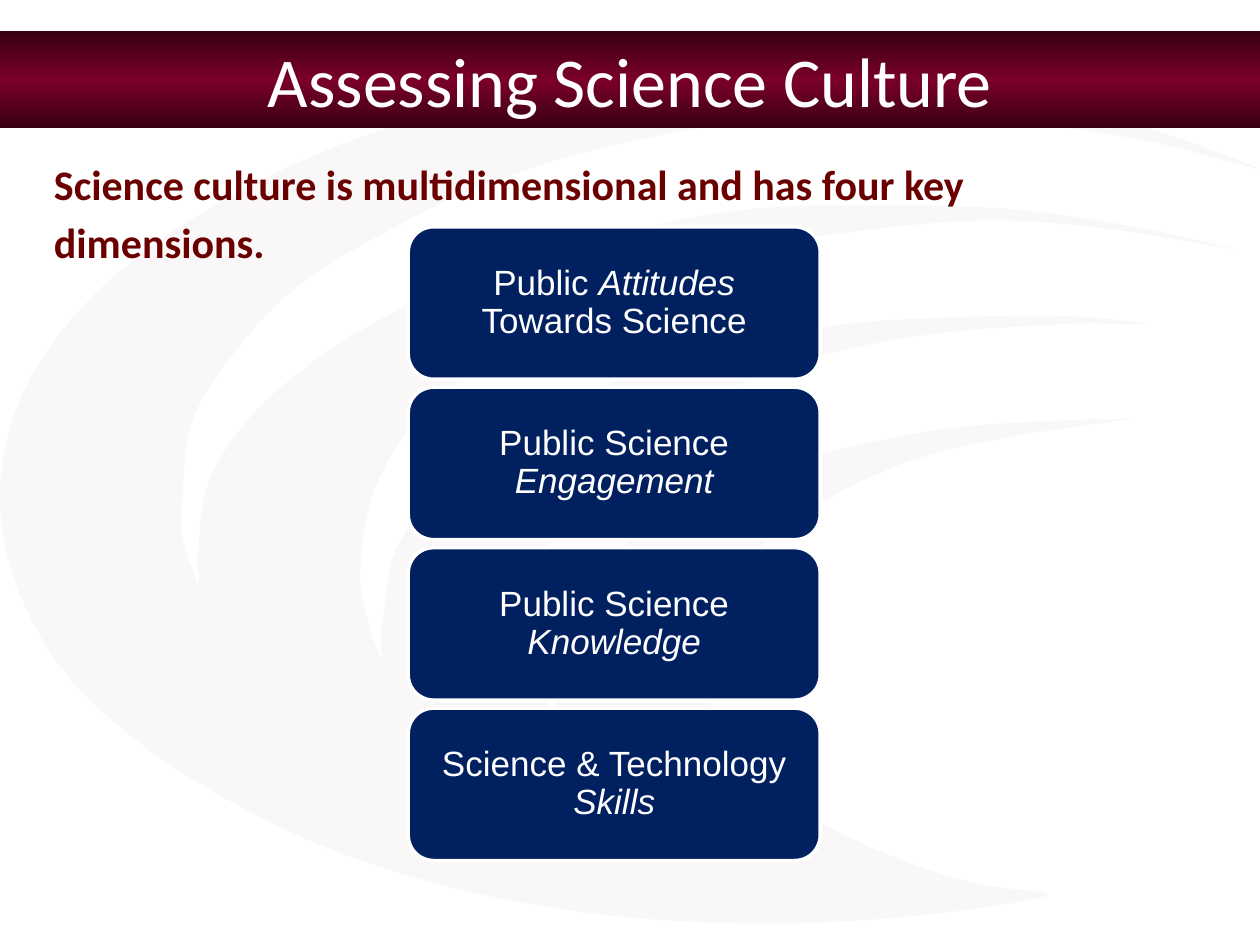
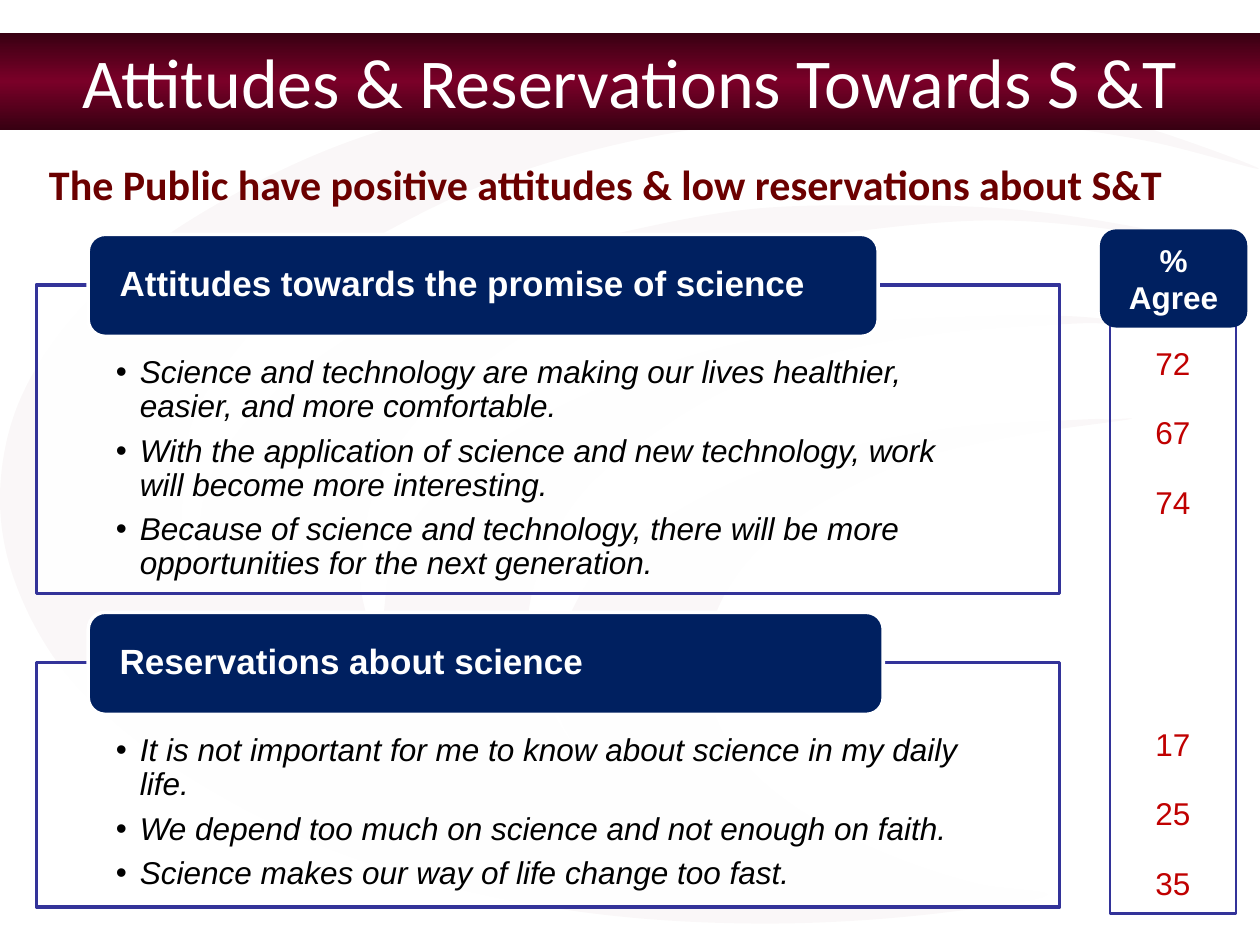
from copy import deepcopy
from dataclasses import dataclass

from lxml import etree
from pptx import Presentation
from pptx.dml.color import RGBColor
from pptx.enum.shapes import MSO_SHAPE
from pptx.enum.text import MSO_ANCHOR, PP_ALIGN
from pptx.oxml.ns import qn
from pptx.util import Emu, Pt

RECT = MSO_SHAPE.RECTANGLE
ROUNDED = MSO_SHAPE.ROUNDED_RECTANGLE
TOP, MIDDLE = MSO_ANCHOR.TOP, MSO_ANCHOR.MIDDLE
LEFT, CENTER = PP_ALIGN.LEFT, PP_ALIGN.CENTER

EMU_PER_PX = 9144
BLANK_LAYOUT = 6

WHITE = RGBColor(0xFF, 0xFF, 0xFF)
BLACK = RGBColor(0, 0, 0)
MAROON = RGBColor(0x7A, 0x00, 0x28)
DARK_MAROON = RGBColor(0x38, 0x00, 0x12)
LEAD_RED = RGBColor(0x6B, 0x00, 0x00)
NAVY = RGBColor(0x00, 0x20, 0x60)
FRAME_BLUE = RGBColor(0x33, 0x33, 0x99)
VALUE_RED = RGBColor(0xC0, 0x00, 0x00)

SWOOSH = (
    (608, 733), (488, 727), (374, 708), (270, 677), (181, 635), (105, 585),
    (48, 529), (12, 462), (0, 396), (12, 327), (48, 264), (105, 207),
    (181, 157), (270, 115), (374, 84), (488, 65), (608, 59), (718, 62),
    (822, 78), (915, 103), (999, 134), (911, 112), (810, 97), (705, 90),
    (592, 97), (488, 115), (391, 144), (310, 182), (238, 226), (189, 276),
    (153, 333), (145, 393), (145, 428), (157, 462), (157, 450), (157, 440),
    (165, 384), (197, 333), (250, 286), (318, 245), (399, 210), (491, 185),
    (596, 166), (705, 163), (802, 166), (895, 179), (980, 198), (882, 182),
    (782, 175), (669, 185), (564, 204), (472, 235), (395, 280), (334, 330),
    (298, 387), (286, 450), (290, 485), (302, 522), (302, 507), (304, 491),
    (314, 437), (351, 387), (407, 343), (484, 305), (572, 276), (673, 257),
    (786, 251), (850, 251), (911, 257), (882, 257), (850, 257), (750, 264),
    (661, 280), (580, 308), (516, 346), (463, 390), (431, 444), (419, 497),
    (431, 550), (459, 598), (443, 566), (439, 535), (451, 491), (479, 447),
    (532, 409), (596, 377), (673, 355), (762, 339), (859, 333), (879, 333),
    (895, 333), (806, 346), (725, 365), (657, 396), (604, 434), (572, 478),
    (560, 525), (568, 569), (592, 607), (629, 639), (673, 664), (725, 686),
    (778, 702), (830, 711), (725, 727),
)


@dataclass(frozen=True)
class Area:
    left: int
    top: int
    width: int
    height: int


@dataclass(frozen=True)
class TextStyle:
    font: str
    size: int
    color: RGBColor
    bold: bool = False
    italic: bool = False
    align: PP_ALIGN = LEFT
    spacing: float = 1.0


@dataclass(frozen=True)
class Dimension:
    lead: str
    emphasis: str
    rest: str = ""


@dataclass(frozen=True)
class Panel:
    frame: Area
    heading: str
    heading_width: int
    statements: tuple[str, ...]


TITLE_STYLE = TextStyle("Calibri", 40, WHITE, align=CENTER)
LEAD_STYLE = TextStyle("Calibri", 24, LEAD_RED, bold=True, spacing=1.15)
DIMENSION_STYLE = TextStyle("Arial", 20, WHITE, align=CENTER, spacing=0.9)
HEADING_STYLE = TextStyle("Arial", 20, WHITE, bold=True, spacing=0.9)
STATEMENT_STYLE = TextStyle("Arial", 18, BLACK, italic=True, spacing=0.9)
VALUE_STYLE = TextStyle("Arial", 18, VALUE_RED, align=CENTER)
AGREE_STYLE = TextStyle("Arial", 18, WHITE, bold=True, align=CENTER)

DIMENSIONS = (
    Dimension("Public ", "Attitudes", " Towards Science"),
    Dimension("Public Science ", "Engagement"),
    Dimension("Public Science ", "Knowledge"),
    Dimension("Science & Technology ", "Skills"),
)
DIMENSION_TOP = 180
DIMENSION_PITCH = 127.33

PANELS = (
    Panel(Area(29, 226, 812, 245), "Attitudes towards the promise of science", 627, (
        "Science and technology are making our lives healthier, easier, and more comfortable.",
        "With the application of science and new technology, work will become more interesting.",
        "Because of science and technology, there will be more opportunities for the next generation.",
    )),
    Panel(Area(29, 526, 812, 194), "Reservations about science", 631, (
        "It is not important for me to know about science in my daily life.",
        "We depend too much on science and not enough on faith.",
        "Science makes our way of life change too fast.",
    )),
)
AGREE_GROUPS = (("72", "67", "74"), ("17", "25", "35"))


def px(length: float) -> Emu:
    return Emu(round(length * EMU_PER_PX))


def set_alpha(shape, percent: int) -> None:
    color = shape._element.spPr.find(qn("a:solidFill"))[0]
    etree.SubElement(color, qn("a:alpha"), val=str(percent * 1000))


def style_paragraph(para, style: TextStyle) -> None:
    para.alignment = style.align
    para.line_spacing = style.spacing
    para.font.name = style.font
    para.font.size = Pt(style.size)
    para.font.color.rgb = style.color
    para.font.bold = style.bold
    para.font.italic = style.italic


def set_frame(shape, anchor: MSO_ANCHOR, side: int = 10, top: int = 5, bottom: int = 5):
    frame = shape.text_frame
    frame.word_wrap = True
    frame.vertical_anchor = anchor
    frame.margin_left = frame.margin_right = px(side)
    frame.margin_top, frame.margin_bottom = px(top), px(bottom)
    return frame


def write(frame, text: str, style: TextStyle) -> None:
    para = frame.paragraphs[0]
    para.add_run().text = text
    style_paragraph(para, style)


def add_box(page, kind: MSO_SHAPE, area: Area, fill: RGBColor | None,
            line: RGBColor | None = None, weight: float = 2):
    box = page.shapes.add_shape(
        kind, px(area.left), px(area.top), px(area.width), px(area.height))
    box.shadow.inherit = False
    if fill is None:
        box.fill.background()
    else:
        box.fill.solid()
        box.fill.fore_color.rgb = fill
    if line is None:
        box.line.fill.background()
    else:
        box.line.color.rgb = line
        box.line.width = Pt(weight)
    return box


def curve_segments(shape) -> None:
    segments = shape._element.spPr.findall(".//" + qn("a:lnTo"))
    ends = [(int(segment[0].get("x")), int(segment[0].get("y"))) for segment in segments]
    count = len(ends)
    for index, segment in enumerate(segments):
        before, start, end, after = (
            ends[(index + shift) % count] for shift in (-2, -1, 0, 1))
        leaving = [s + (e - b) / 6 for b, s, e in zip(before, start, end)]
        arriving = [e - (a - s) / 6 for s, e, a in zip(start, end, after)]
        curve = etree.Element(qn("a:cubicBezTo"))
        for x, y in (leaving, arriving, end):
            etree.SubElement(curve, qn("a:pt"), x=str(round(x)), y=str(round(y)))
        segment.getparent().replace(segment, curve)


def add_swoosh(page) -> None:
    first, *others = [(px(x), px(y)) for x, y in SWOOSH]
    builder = page.shapes.build_freeform(*first)
    builder.add_line_segments([*others, first], close=True)
    swoosh = builder.convert_to_shape()
    curve_segments(swoosh)
    swoosh.shadow.inherit = False
    swoosh.fill.solid()
    swoosh.fill.fore_color.rgb = MAROON
    set_alpha(swoosh, 3)
    swoosh.line.fill.background()


def add_title(page, text: str, top: int) -> None:
    band = add_box(page, RECT, Area(0, top, 1000, 77), MAROON)
    band.fill.gradient()
    band.fill.gradient_angle = 90
    stops = band._element.spPr.find(".//" + qn("a:gsLst"))
    stops.insert(1, deepcopy(stops[0]))
    colors = (DARK_MAROON, MAROON, DARK_MAROON)
    for index, (stop, color) in enumerate(zip(band.fill.gradient_stops, colors)):
        stop.position = index / 2
        stop.color.rgb = color
    write(set_frame(band, TOP), text, TITLE_STYLE)


def add_lead(page, text: str, area: Area) -> None:
    box = page.shapes.add_textbox(
        px(area.left), px(area.top), px(area.width), px(area.height))
    write(set_frame(box, TOP), text, LEAD_STYLE)


def add_page(deck, title: str, band_top: int, lead: str, lead_area: Area):
    page = deck.slides.add_slide(deck.slide_layouts[BLANK_LAYOUT])
    add_swoosh(page)
    add_title(page, title, band_top)
    add_lead(page, lead, lead_area)
    return page


def add_dimension(page, dimension: Dimension, top: float) -> None:
    box = add_box(page, ROUNDED, Area(324, top, 327, 121), NAVY, WHITE)
    para = set_frame(box, MIDDLE, 8, 4, 4).paragraphs[0]
    for text in (dimension.lead, dimension.emphasis, dimension.rest):
        if text:
            span = para.add_run()
            span.text = text
            span.font.italic = text == dimension.emphasis
    style_paragraph(para, DIMENSION_STYLE)


def add_bullet(para) -> None:
    props = para._p.get_or_add_pPr()
    props.set("marL", str(px(19)))
    props.set("indent", str(px(-19)))
    etree.SubElement(props, qn("a:buFont"), typeface="Arial")
    etree.SubElement(props, qn("a:buChar"), char="•")


def add_panel(page, panel: Panel) -> None:
    box = add_box(page, RECT, panel.frame, WHITE, FRAME_BLUE)
    set_alpha(box, 90)
    frame = set_frame(box, TOP, 63, 57, 14)
    for index, statement in enumerate(panel.statements):
        para = frame.add_paragraph() if index else frame.paragraphs[0]
        para.add_run().text = statement
        add_bullet(para)
        style_paragraph(para, STATEMENT_STYLE)
        para.space_after = Pt(6)
    heading_area = Area(70, panel.frame.top - 40, panel.heading_width, 81)
    heading = add_box(page, ROUNDED, heading_area, NAVY, WHITE)
    write(set_frame(heading, MIDDLE, 21, 0, 0), panel.heading, HEADING_STYLE)


def add_agree_column(page) -> None:
    column = add_box(page, RECT, Area(881, 221, 100, 504), None, FRAME_BLUE, 1.5)
    frame = set_frame(column, TOP, top=52)
    for group_index, group in enumerate(AGREE_GROUPS):
        for index, value in enumerate(group):
            first = group_index == index == 0
            para = frame.paragraphs[0] if first else frame.add_paragraph()
            para.add_run().text = value
            style_paragraph(para, VALUE_STYLE)
            para.space_after = Pt(18)
            if group_index and index == 0:
                para.space_before = Pt(99)
    header = add_box(page, ROUNDED, Area(873, 182, 117, 78), NAVY)
    write(set_frame(header, MIDDLE), "% Agree", AGREE_STYLE)


def main() -> None:
    deck = Presentation()
    deck.slide_width, deck.slide_height = px(1000), px(750)

    page = add_page(
        deck, "Assessing Science Culture", 25,
        "Science culture is multidimensional and has four key dimensions.",
        Area(33, 115, 867, 103))
    for index, dimension in enumerate(DIMENSIONS):
        add_dimension(page, dimension, DIMENSION_TOP + index * DIMENSION_PITCH)

    page = add_page(
        deck, "Attitudes & Reservations Towards S &T", 26,
        "The Public have positive attitudes & low reservations about S&T",
        Area(29, 115, 942, 54))
    for panel in PANELS:
        add_panel(page, panel)
    add_agree_column(page)

    deck.save("out.pptx")


if __name__ == "__main__":
    main()
